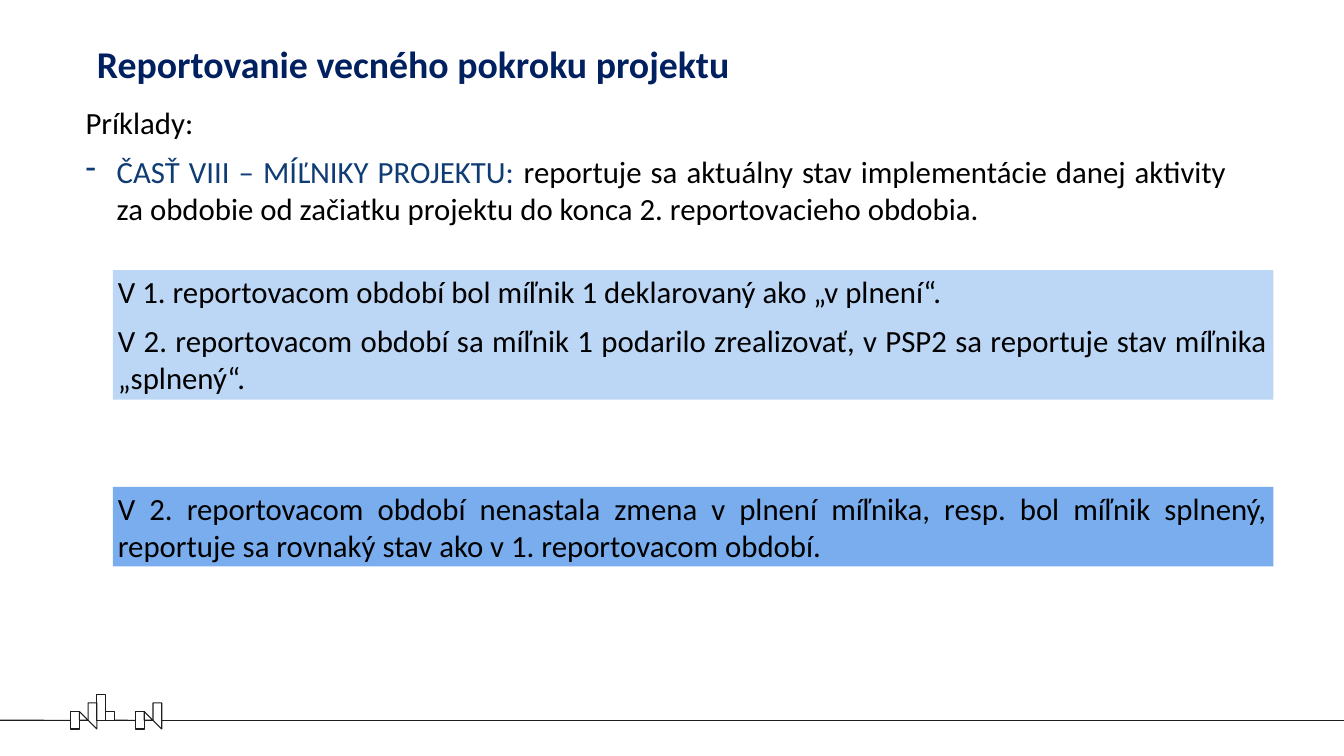
"""Build the slide on reporting project milestones."""
from dataclasses import dataclass

from lxml.etree import SubElement
from pptx import Presentation
from pptx.dml.color import RGBColor
from pptx.enum.shapes import MSO_CONNECTOR, MSO_SHAPE
from pptx.enum.text import MSO_ANCHOR, MSO_AUTO_SIZE, PP_ALIGN
from pptx.oxml.ns import qn
from pptx.util import Cm, Pt

BLACK, NAVY, BLUE, INK = "000000", "002060", "0F3C74", "1D1E1C"
SLIDE_WIDTH, GROUND, UNIT = 67.72, 36.3, 0.44
HANGING = 1.57


@dataclass(frozen=True)
class Panel:
    left: float
    top: float
    height: float
    paragraphs: tuple
    fill: str = ""
    dash: int = -1
    width: float = 58.47


PANELS = (
    Panel(4.06, 5.08, 6.53, (
        (("Príklady:", BLACK),),
        (("ČASŤ VIII – MÍĽNIKY PROJEKTU: ", BLUE),
         ("reportuje sa aktuálny stav implementácie danej aktivity  za obdobie "
          "od začiatku projektu do konca 2. reportovacieho obdobia.", BLACK)),
    ), dash=1),
    Panel(5.69, 13.61, 6.53, (
        (("V 1. reportovacom období bol míľnik 1 deklarovaný ako „v plnení“.", BLACK),),
        (("V 2. reportovacom období sa míľnik 1 podarilo zrealizovať, v PSP2 sa "
          "reportuje stav míľnika „splnený“.", BLACK),),
    ), fill="BCD6F6"),
    Panel(5.69, 24.54, 4.01, (
        (("V 2. reportovacom období nenastala zmena v plnení míľnika, resp. bol míľnik "
          "splnený, reportuje sa rovnaký stav ako v 1. reportovacom období.", BLACK),),
    ), fill="79ADEE"),
)


def paint(color_format, color: str) -> None:
    color_format.rgb = RGBColor.from_string(color)


def add_text(paragraph, text: str, *, size: float = 44, color: str = BLACK,
             bold: bool = False) -> None:
    run = paragraph.add_run()
    run.text = text
    run.font.name, run.font.size, run.font.bold = "Calibri", Pt(size), bold
    paint(run.font.color, color)


def fill_with(shape, color: str) -> None:
    shape.fill.solid()
    paint(shape.fill.fore_color, color)


def add_dash(paragraph) -> None:
    properties = paragraph._p.get_or_add_pPr()
    properties.set("marL", str(Cm(HANGING)))
    properties.set("indent", str(-Cm(HANGING)))
    SubElement(properties, qn("a:buChar")).set("char", "-")


def add_panel(slide, panel: Panel) -> None:
    bounds = [Cm(v) for v in (panel.left, panel.top, panel.width, panel.height)]
    if panel.fill:
        shape = slide.shapes.add_shape(MSO_SHAPE.RECTANGLE, *bounds)
        shape.shadow.inherit = False
        fill_with(shape, panel.fill)
        shape.line.fill.background()
    else:
        shape = slide.shapes.add_textbox(*bounds)
    frame = shape.text_frame
    frame.word_wrap = True
    frame.vertical_anchor = MSO_ANCHOR.TOP
    for index, pieces in enumerate(panel.paragraphs):
        paragraph = frame.add_paragraph() if index else frame.paragraphs[0]
        paragraph.alignment = PP_ALIGN.JUSTIFY
        paragraph.space_after = Pt(18)
        if index == panel.dash:
            add_dash(paragraph)
        for text, color in pieces:
            add_text(paragraph, text, color=color)


def outline(shape) -> None:
    shape.shadow.inherit = False
    shape.fill.background()
    paint(shape.line.color, INK)
    shape.line.width = Pt(1.5)


def add_block(slide, origin: float, column: int, row: int, height: int):
    block = slide.shapes.add_shape(
        MSO_SHAPE.RECTANGLE, Cm(origin + column * UNIT), Cm(GROUND + row * UNIT),
        Cm(UNIT), Cm(height * UNIT))
    outline(block)
    return block


def add_facade(slide, origin: float, corners: tuple) -> None:
    points = [(Cm(origin + x * UNIT), Cm(GROUND + y * UNIT)) for x, y in corners]
    builder = slide.shapes.build_freeform(*points[0])
    builder.add_line_segments(points[1:], close=True)
    outline(builder.convert_to_shape())


def add_house(slide, origin: float):
    add_facade(slide, origin, ((2, 0), (1, 0), (1, -1)))
    add_facade(slide, origin, ((2, -2), (2, 0), (3, 1), (3, -2)))
    return add_block(slide, origin, 0, -1, 2)


def add_ground(slide, start: float, end: float, house=None) -> None:
    ground = slide.shapes.add_connector(
        MSO_CONNECTOR.STRAIGHT, Cm(start), Cm(GROUND), Cm(end), Cm(GROUND))
    paint(ground.line.color, INK)
    ground.line.width = Pt(1.5)
    SubElement(ground._element.spPr, qn("a:effectLst"))
    if house is not None:
        ground.end_connect(house, 1)


def add_skyline(slide) -> None:
    first, second = 3.56, 6.83
    add_block(slide, first, 3, -3, 3)
    add_block(slide, first, 4, -1, 1)
    add_ground(slide, 0, first, add_house(slide, first))
    add_ground(slide, first + 5 * UNIT, second, add_house(slide, second))
    add_ground(slide, second + 3 * UNIT, SLIDE_WIDTH)


def set_title(slide) -> None:
    title = slide.shapes.title
    title.left, title.top, title.width, title.height = (
        Cm(v) for v in (4.88, 2.03, 40.39, 2.31))
    fill_with(title, "FFFFFF")
    frame = title.text_frame
    frame.auto_size = MSO_AUTO_SIZE.NONE
    frame.vertical_anchor = MSO_ANCHOR.MIDDLE
    frame.margin_left = frame.margin_right = frame.margin_top = frame.margin_bottom = 0
    frame.paragraphs[0].alignment = PP_ALIGN.LEFT
    add_text(frame.paragraphs[0], "Reportovanie vecného pokroku projektu",
             size=54, color=NAVY, bold=True)


def main() -> None:
    presentation = Presentation()
    presentation.slide_width, presentation.slide_height = Cm(SLIDE_WIDTH), Cm(38.1)
    slide = presentation.slides.add_slide(presentation.slide_layouts[5])
    add_skyline(slide)
    set_title(slide)
    for panel in PANELS:
        add_panel(slide, panel)
    presentation.save("out.pptx")


if __name__ == "__main__":
    main()
